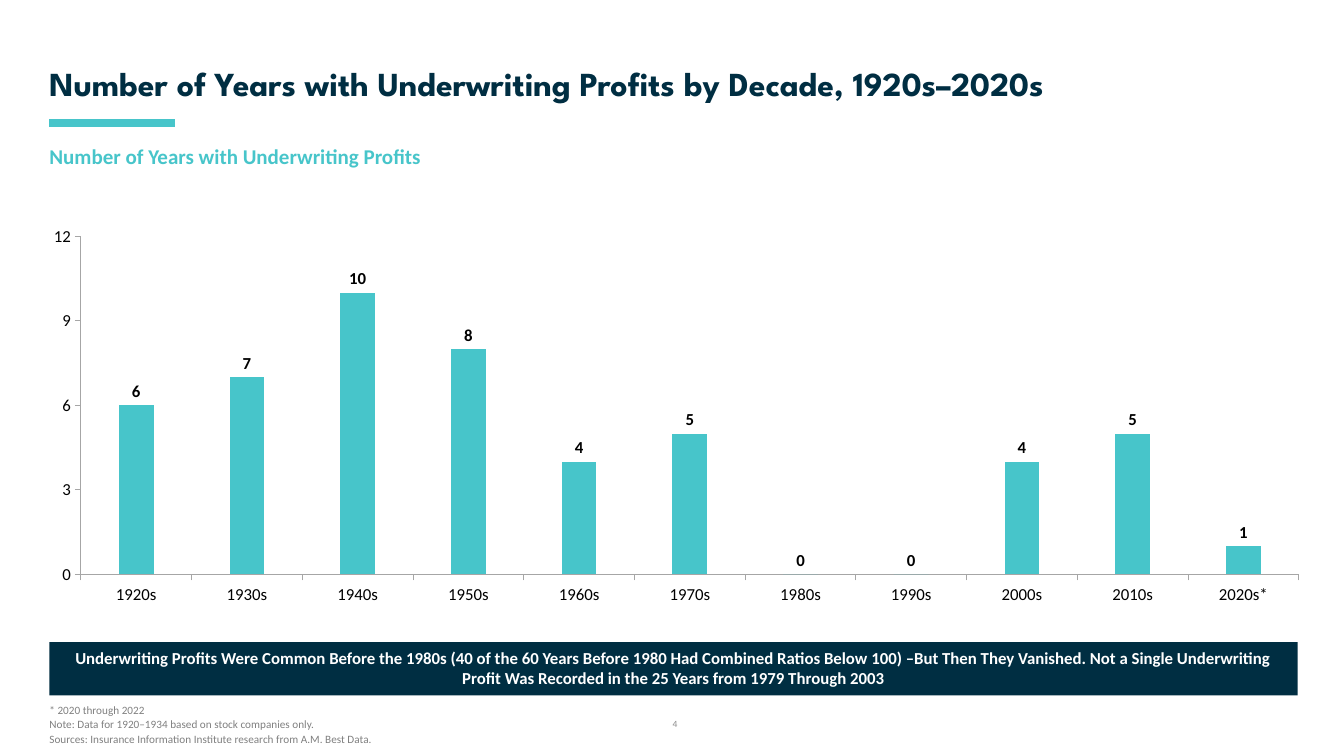
from lxml.etree import SubElement
from pptx import Presentation
from pptx.chart.data import CategoryChartData
from pptx.dml.color import RGBColor
from pptx.enum.chart import XL_CHART_TYPE, XL_LABEL_POSITION, XL_TICK_MARK
from pptx.enum.shapes import MSO_CONNECTOR, MSO_SHAPE
from pptx.enum.text import MSO_ANCHOR, MSO_AUTO_SIZE, PP_ALIGN
from pptx.oxml import parse_xml
from pptx.oxml.ns import nsdecls, qn
from pptx.util import Inches, Pt

# Content
TITLE = "Number of Years with Underwriting Profits by Decade, 1920s–2020s"
SUBTITLE = "Number of Years with Underwriting Profits"
PROFIT_YEARS = {
    "1920s": 6, "1930s": 7, "1940s": 10, "1950s": 8, "1960s": 4, "1970s": 5,
    "1980s": 0, "1990s": 0, "2000s": 4, "2010s": 5, "2020s*": 1,
}
TAKEAWAY = (
    "Underwriting Profits Were Common Before the 1980s (40 of the 60 Years Before 1980 "
    "Had Combined Ratios Below 100) –But Then They Vanished. Not a Single Underwriting "
    "Profit Was Recorded in the 25 Years from 1979 Through 2003"
)
FOOTNOTES = [
    "* 2020 through 2022",
    "Note: Data for 1920–1934 based on stock companies only.",
    "Sources: Insurance Information Institute research from A.M. Best Data.",
]
PAGE_NUMBER = "4"

# Layout and formats
WIDTH, HEIGHT, MARGIN = 13.33, 7.5, 0.49
TEAL, NAVY, AXIS_GRAY = "47C5CA", "002E42", "A6A6A6"
PLOT = {"x": 0.036, "y": 0.112, "w": 0.961, "h": 0.804}
FONTS = {
    "title": {"name": "League Spartan", "size": 24, "bold": True, "color": NAVY},
    "subtitle": {"name": "Calibri", "size": 15, "bold": True, "color": TEAL},
    "axis": {"name": "Calibri", "size": 12, "bold": False, "color": "000000"},
    "value": {"name": "Calibri", "size": 12, "bold": True, "color": "000000"},
    "takeaway": {"name": "Calibri", "size": 12, "bold": True, "color": "FFFFFF"},
    "footnote": {"name": "Calibri", "size": 8, "bold": False, "color": "808080"},
    "page": {"name": "Calibri", "size": 6.8, "bold": False, "color": "8C8C8C"},
}


def rgb(hex_color):
    return RGBColor.from_string(hex_color)


def area(left, top, width, height):
    return [Inches(length) for length in (left, top, width, height)]


def style(font, role):
    for key, value in FONTS[role].items():
        if key == "color":
            font.color.rgb = rgb(value)
        else:
            setattr(font, key, Pt(value) if key == "size" else value)


def write(shape, lines, role, insets=(0, 0, 0, 0), anchor=MSO_ANCHOR.TOP,
          align=PP_ALIGN.LEFT, spacing=1.0, gap=0):
    frame = shape.text_frame
    frame.text = "\n".join(lines)
    left, top, right, bottom = (Inches(inset) for inset in insets)
    settings = {
        "word_wrap": True, "auto_size": MSO_AUTO_SIZE.NONE, "vertical_anchor": anchor,
        "margin_left": left, "margin_top": top, "margin_right": right, "margin_bottom": bottom,
    }
    for key, value in settings.items():
        setattr(frame, key, value)
    for index, paragraph in enumerate(frame.paragraphs):
        paragraph.alignment = align
        paragraph.line_spacing = spacing
        paragraph.space_before = Pt(gap if index else 0)
        for run in paragraph.runs:
            style(run.font, role)


def add_heading(slide):
    title = slide.shapes.title
    title.left, title.top, title.width, title.height = area(MARGIN, 0.62, 12.49, 0.46)
    write(title, [TITLE], "title", (0, 0.05, 0.1, 0.05), MSO_ANCHOR.BOTTOM, spacing=0.9)

    accent = slide.shapes.add_connector(
        MSO_CONNECTOR.STRAIGHT, *area(MARGIN, 1.22, MARGIN + 1.25, 1.22))
    accent.line.color.rgb = rgb(TEAL)
    accent.line.width = Pt(6)
    SubElement(accent.line._get_or_add_ln().getparent(), qn("a:effectLst"))

    subtitle = slide.shapes.add_textbox(*area(MARGIN, 1.42, 3.99, 0.25))
    write(subtitle, [SUBTITLE], "subtitle")


def add_profit_chart(slide):
    data = CategoryChartData()
    data.categories = list(PROFIT_YEARS)
    data.add_series("Years with underwriting profits", list(PROFIT_YEARS.values()))
    chart = slide.shapes.add_chart(
        XL_CHART_TYPE.COLUMN_CLUSTERED, *area(0.35, 1.88, 12.57, 4.17), data).chart
    chart.has_title = chart.has_legend = False
    style(chart.font, "axis")

    # Axes
    for axis in (chart.category_axis, chart.value_axis):
        axis.has_major_gridlines = False
        axis.major_tick_mark = XL_TICK_MARK.OUTSIDE
        axis.format.line.color.rgb = rgb(AXIS_GRAY)
        axis.format.line.width = Pt(0.75)
        style(axis.tick_labels.font, "axis")
    scale = {"minimum_scale": 0, "maximum_scale": 12, "major_unit": 3}
    for key, value in scale.items():
        setattr(chart.value_axis, key, value)
    chart.value_axis.tick_labels.number_format = "#,##0"
    chart.value_axis.tick_labels.number_format_is_linked = False

    # Columns and their values
    columns = chart.plots[0]
    columns.vary_by_categories = False
    columns.gap_width, columns.overlap = 219, -27
    columns.series[0].format.fill.solid()
    columns.series[0].format.fill.fore_color.rgb = rgb(TEAL)
    columns.has_data_labels = True
    columns.data_labels.show_value = True
    columns.data_labels.position = XL_LABEL_POSITION.OUTSIDE_END
    style(columns.data_labels.font, "value")

    # Fixed inner plot area
    modes = '<c:layoutTarget val="inner"/><c:xMode val="edge"/><c:yMode val="edge"/>'
    shares = "".join(f'<c:{key} val="{share}"/>' for key, share in PLOT.items())
    layout = parse_xml(f'<c:layout {nsdecls("c")}><c:manualLayout>{modes}{shares}'
                       '</c:manualLayout></c:layout>')
    plot_area = chart.element.chart.plotArea
    for automatic in plot_area.findall(qn("c:layout")):
        plot_area.remove(automatic)
    plot_area.insert(0, layout)


def add_takeaway(slide):
    banner = slide.shapes.add_shape(
        MSO_SHAPE.RECTANGLE, *area(MARGIN, 6.37, 12.38, 0.53))
    banner.shadow.inherit = False
    banner.fill.solid()
    banner.fill.fore_color.rgb = rgb(NAVY)
    banner.line.fill.background()
    write(banner, [TAKEAWAY], "takeaway", (0.1, 0.05, 0.1, 0.05),
          MSO_ANCHOR.MIDDLE, PP_ALIGN.CENTER, 0.95)


def add_footer(slide):
    footnotes = slide.shapes.add_textbox(*area(MARGIN, 7, 9.45, 0.41))
    write(footnotes, FOOTNOTES, "footnote", spacing=0.85, gap=2)

    page = slide.shapes.add_textbox(*area(5.57, 7.08, 2.25, 0.2))
    write(page, [PAGE_NUMBER], "page", (0.1, 0.05, 0.1, 0.05),
          MSO_ANCHOR.MIDDLE, PP_ALIGN.CENTER)


def main():
    deck = Presentation()
    deck.slide_width, deck.slide_height = Inches(WIDTH), Inches(HEIGHT)
    slide = deck.slides.add_slide(deck.slide_layouts.get_by_name("Title Only"))
    for add_part in (add_heading, add_profit_chart, add_takeaway, add_footer):
        add_part(slide)
    deck.save("out.pptx")


if __name__ == "__main__":
    main()
